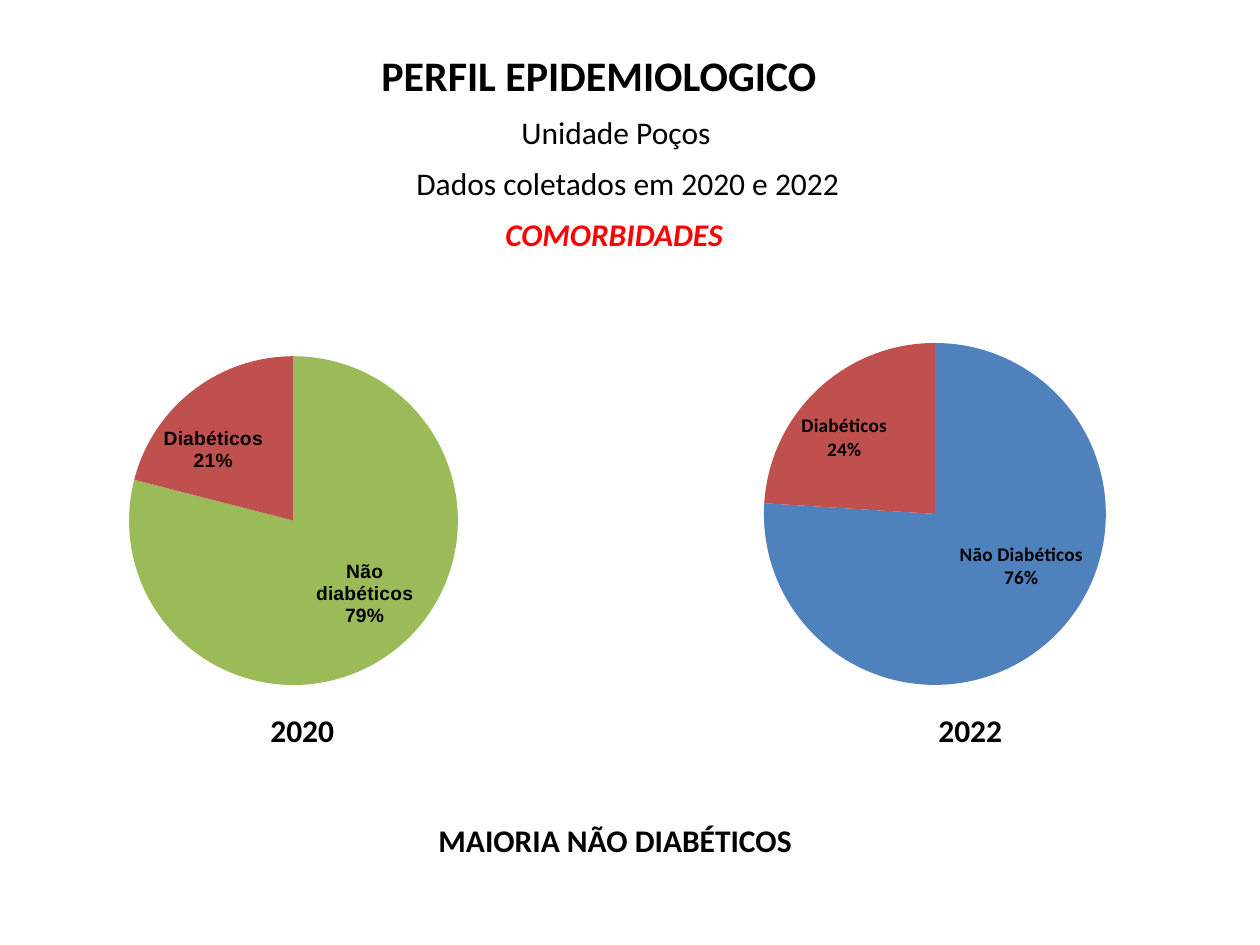
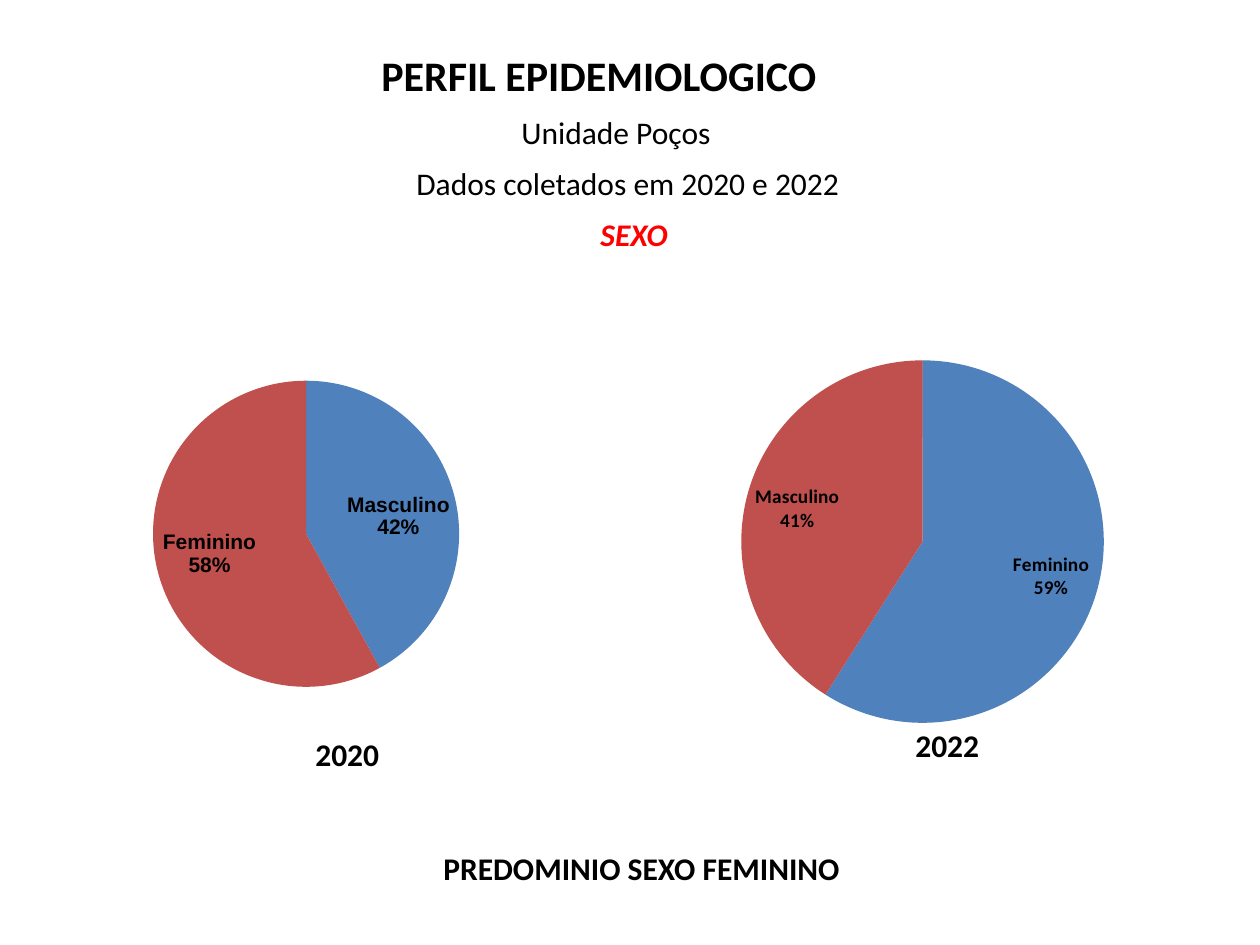
import pptx
import pptx.chart.data
import pptx.dml.color
import pptx.enum.chart
import pptx.enum.text
import pptx.oxml
import pptx.oxml.ns
import pptx.util

PX = 914400 / 126
FONT = "Calibri"
COLORS = {"text": "000000", "topic": "FF0000", "blue": "4F81BD",
          "red": "C0504D", "green": "9BBB59"}

# Shared heading: text, left, width
TITLE = "PERFIL EPIDEMIOLOGICO"
TITLE_BOX = (348, 43, 502, 63)
SUBTITLES = [("Unidade Poços", 509, 224),
             ("Dados coletados em 2020 e 2022", 404, 454)]
HEADING_TOP, HEADING_STEP = 107, 51
LINE_HEIGHT, YEAR_WIDTH = 50, 89

# Topic and conclusion: text, left, (top,) width; plot: fractions of the chart
SLIDES = [
    {
        "topic": ("COMORBIDADES", 493, 247),
        "conclusion": ("MAIORIA NÃO DIABÉTICOS", 426, 815, 382),
        "pies": [
            {"year": "2020", "year_at": (258, 705), "box": (-12, 326, 630, 378),
             "plot": (0.03, 0.08, 0.91, 0.87), "font": "Arial", "size": 11,
             "slices": [("Não diabéticos", 79, "green"), ("Diabéticos", 21, "red")]},
            {"year": "2022", "year_at": (926, 705), "box": (631, 325, 596, 360),
             "plot": (0.02, 0.05, 0.98, 0.95), "font": FONT, "size": 11,
             "slices": [("Não Diabéticos", 76, "blue"), ("Diabéticos", 24, "red")]},
        ],
    },
    {
        "topic": ("SEXO", 588, 93),
        "conclusion": ("PREDOMINIO SEXO FEMININO", 431, 843, 426),
        "pies": [
            {"year": "2020", "year_at": (303, 729), "box": (-12, 343, 630, 378),
             "plot": (0.08, 0.1, 0.85, 0.81), "font": "Arial", "size": 12,
             "slices": [("Masculino", 42, "blue"), ("Feminino", 58, "red")]},
            {"year": "2022", "year_at": (903, 720), "box": (611, 311, 617, 412),
             "plot": (0.05, 0.12, 0.91, 0.88), "font": FONT, "size": 11,
             "slices": [("Feminino", 59, "blue"), ("Masculino", 41, "red")]},
        ],
    },
]


def emu(*lengths):
    return [round(length * PX) for length in lengths]


def rgb(name):
    return pptx.dml.color.RGBColor.from_string(COLORS[name])


def set_font(font, size, color="text", bold=False, italic=False, name=FONT):
    font.name, font.size = name, pptx.util.Pt(size)
    font.bold, font.italic = bold, italic
    font.color.rgb = rgb(color)


def add_title(slide):
    title = slide.shapes.title
    title.left, title.top, title.width, title.height = emu(*TITLE_BOX)
    title.text_frame.text = TITLE
    paragraph = title.text_frame.paragraphs[0]
    paragraph.alignment = pptx.enum.text.PP_ALIGN.CENTER
    set_font(paragraph.font, 24, bold=True)


def add_line(slide, text, left, top, width, **style):
    frame = slide.shapes.add_textbox(*emu(left, top, width, LINE_HEIGHT)).text_frame
    frame.word_wrap = False
    frame.text = text
    set_font(frame.paragraphs[0].font, 18, **style)


def set_plot_layout(chart, fractions):
    plot_area = chart._chartSpace.chart.plotArea
    for layout in plot_area.findall(pptx.oxml.ns.qn("c:layout")):
        plot_area.remove(layout)
    sizes = "".join(f'<c:{tag} val="{value}"/>' for tag, value in zip("xywh", fractions))
    plot_area.insert(0, pptx.oxml.parse_xml(
        f'<c:layout {pptx.oxml.ns.nsdecls("c")}><c:manualLayout>'
        '<c:layoutTarget val="inner"/><c:xMode val="edge"/><c:yMode val="edge"/>'
        f'{sizes}</c:manualLayout></c:layout>'))


def add_pie(slide, pie):
    names, values, colors = zip(*pie["slices"])
    data = pptx.chart.data.CategoryChartData()
    data.categories = names
    data.add_series("Series 1", values)
    chart = slide.shapes.add_chart(
        pptx.enum.chart.XL_CHART_TYPE.PIE, *emu(*pie["box"]), data).chart
    chart.has_title = chart.has_legend = False
    set_font(chart.font, 10)
    set_plot_layout(chart, pie["plot"])

    plot = chart.plots[0]
    plot.vary_by_categories = True
    for index, color in enumerate(colors):
        fill = plot.series[0].points[index].format.fill
        fill.solid()
        fill.fore_color.rgb = rgb(color)

    # Labels: category above percentage
    labels = plot.series[0].data_labels
    labels.show_category_name = labels.show_percentage = True
    labels.show_value = False
    labels.position = pptx.enum.chart.XL_LABEL_POSITION.BEST_FIT
    set_font(labels.font, pie["size"], bold=True, name=pie["font"])
    separator = pptx.oxml.parse_xml(
        f'<c:separator {pptx.oxml.ns.nsdecls("c")}>\n</c:separator>')
    labels._element.find(pptx.oxml.ns.qn("c:showBubbleSize")).addnext(separator)


def build_slide(presentation, content):
    slide = presentation.slides.add_slide(presentation.slide_layouts[5])
    add_title(slide)

    # Heading lines, the last one being the topic
    for index, (text, left, width) in enumerate(SUBTITLES + [content["topic"]]):
        style = {}
        if index == len(SUBTITLES):
            style = {"color": "topic", "bold": True, "italic": True}
        add_line(slide, text, left, HEADING_TOP + index * HEADING_STEP, width, **style)

    # Pies with their years, then the conclusion
    for pie in content["pies"]:
        add_pie(slide, pie)
        add_line(slide, pie["year"], *pie["year_at"], YEAR_WIDTH, bold=True)
    add_line(slide, *content["conclusion"], bold=True)


def main():
    presentation = pptx.Presentation()
    presentation.slide_width, presentation.slide_height = emu(1260, 945)
    for content in SLIDES:
        build_slide(presentation, content)
    presentation.save("out.pptx")


if __name__ == "__main__":
    main()
